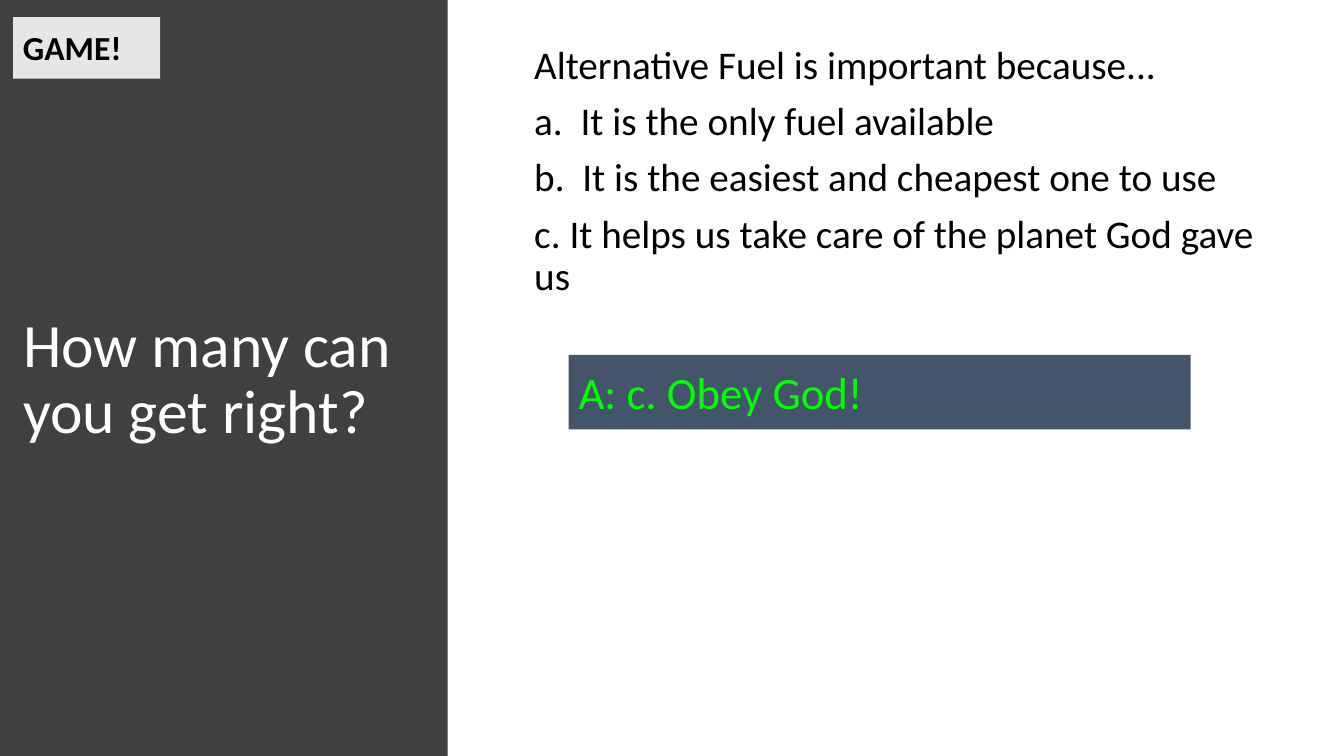
from pptx import Presentation
from pptx.dml.color import RGBColor
from pptx.enum.shapes import MSO_SHAPE
from pptx.enum.text import MSO_ANCHOR, PP_ALIGN
from pptx.util import Inches, Pt

RECTANGLE = MSO_SHAPE.RECTANGLE
TOP, MIDDLE = MSO_ANCHOR.TOP, MSO_ANCHOR.MIDDLE
LEFT = PP_ALIGN.LEFT

CHARCOAL = RGBColor(0x40, 0x40, 0x40)
LIGHT_GRAY = RGBColor(0xE7, 0xE6, 0xE6)
SLATE = RGBColor(0x44, 0x54, 0x6A)
GREEN = RGBColor(0x00, 0xFF, 0x00)
WHITE = RGBColor(0xFF, 0xFF, 0xFF)
BLACK = RGBColor(0x00, 0x00, 0x00)

QUESTION = [
    "Alternative Fuel is important because...",
    "a.  It is the only fuel available",
    "b.  It is the easiest and cheapest one to use",
    "c. It helps us take care of the planet God gave us",
]


def apply_format(target, values):
    for name, value in values.items():
        setattr(target, name, value)


def write_lines(frame, lines, size, color, bold=False, anchor=TOP, inset=0.05, **spacing):
    apply_format(frame, {
        "word_wrap": True,
        "vertical_anchor": anchor,
        "margin_left": Inches(0.1),
        "margin_right": Inches(0.1),
        "margin_top": Inches(inset),
        "margin_bottom": Inches(inset),
    })
    for index, line in enumerate(lines):
        paragraph = frame.add_paragraph() if index else frame.paragraphs[0]
        apply_format(paragraph, {"alignment": LEFT, **spacing})
        run = paragraph.add_run()
        run.text = line
        apply_format(run.font, {"name": "Calibri", "size": Pt(size), "bold": bold})
        run.font.color.rgb = color


def add_panel(slide, box, fill):
    panel = slide.shapes.add_shape(RECTANGLE, *map(Inches, box))
    panel.shadow.inherit = False
    panel.fill.solid()
    panel.fill.fore_color.rgb = fill
    panel.line.fill.background()
    return panel


def add_label(slide, box, fill, text, size, color, bold=False):
    label = add_panel(slide, box, fill)
    write_lines(label.text_frame, [text], size, color, bold, inset=0.1)


def add_text(slide, box, lines, size, color, **layout):
    text_box = slide.shapes.add_textbox(*map(Inches, box))
    write_lines(text_box.text_frame, lines, size, color, line_spacing=0.9, **layout)


def main():
    deck = Presentation()
    deck.slide_width, deck.slide_height = Inches(13.33), Inches(7.5)
    slide = deck.slides.add_slide(deck.slide_layouts[6])

    add_panel(slide, (0, 0, 4.44, 7.5), CHARCOAL)
    add_text(slide, (0.13, 0.4, 4.09, 6.75), ["How many can you get right?"], 44, WHITE, anchor=MIDDLE)
    add_text(slide, (5.2, 0.4, 7.39, 3.82), QUESTION, 28, BLACK, space_before=Pt(10))
    add_label(slide, (0.13, 0.17, 1.46, 0.61), LIGHT_GRAY, "GAME!", 24, BLACK, bold=True)
    add_label(slide, (5.64, 3.52, 6.17, 0.74), SLATE, "A: c. Obey God!", 32, GREEN)

    deck.save("out.pptx")


if __name__ == "__main__":
    main()
